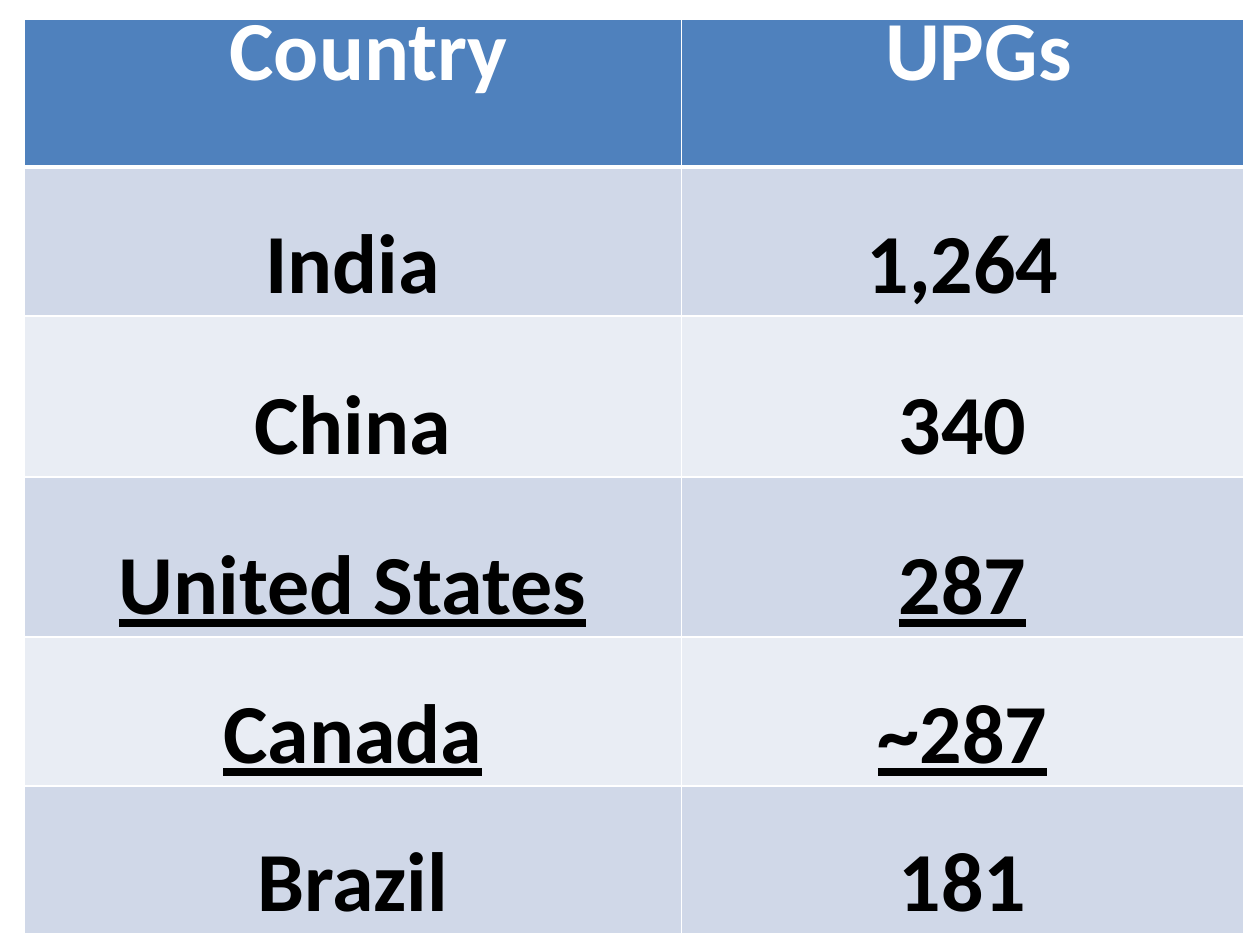
"""Build a slide with a table of UPG counts by country."""
from lxml import etree
from pptx import Presentation
from pptx import util as u
from pptx.dml.color import RGBColor
from pptx.enum import text
from pptx.oxml.ns import qn

HEADER = ("Country", "UPGs")
COUNTRIES = [
    ("India", "1,264"),
    ("China", "340"),
    ("United States", "287"),
    ("Canada", "~287"),
    ("Brazil", "181"),
]
UNDERLINED = {"United States", "Canada"}
COLORS = {
    "header": "4F81BD",
    "odd": "D0D8E8",
    "even": "E9EDF4",
    "border": "FFFFFF",
    "header_text": "FFFFFF",
    "body_text": "000000",
}
COLUMN_WIDTHS = (13.26, 11.33)
ROW_HEIGHTS = (2.99, 3.0, 3.25, 3.22, 3.0, 2.99)
LEFT, TOP = 0.48, 0.38
LINE_PITCH = u.Pt(24)
HEADER_INDENT = u.Cm(0.64)


def add_borders(cell, bottom):
    properties = cell._tc.get_or_add_tcPr()
    for side, points in (("L", 1), ("R", 1), ("T", 1), ("B", bottom)):
        line = etree.SubElement(properties, qn(f"a:ln{side}"), w=str(u.Pt(points)))
        fill = etree.SubElement(line, qn("a:solidFill"))
        etree.SubElement(fill, qn("a:srgbClr"), val=COLORS["border"])


def fill_cell(cell, words, row, underlined):
    is_header = row == 0
    band = "header" if is_header else ("even", "odd")[row % 2]
    add_borders(cell, 3 if is_header else 1)
    cell.fill.solid()
    cell.fill.fore_color.rgb = RGBColor.from_string(COLORS[band])
    cell.margin_left = cell.margin_right = u.Cm(0.05)
    cell.margin_top = LINE_PITCH if is_header else 0
    cell.margin_bottom = 0
    anchor = text.MSO_ANCHOR
    cell.vertical_anchor = anchor.TOP if is_header else anchor.BOTTOM
    cell.text = words

    para = cell.text_frame.paragraphs[0]
    para.alignment = text.PP_ALIGN.CENTER
    para.line_spacing = LINE_PITCH
    if is_header:
        para._p.get_or_add_pPr().set("indent", str(HEADER_INDENT))
    font = para.runs[0].font
    font.name, font.size, font.bold = "Calibri", u.Pt(48), True
    font.underline = underlined
    color = "header_text" if is_header else "body_text"
    font.color.rgb = RGBColor.from_string(COLORS[color])


def main():
    deck = Presentation()
    deck.slide_width, deck.slide_height = u.Cm(25.4), u.Cm(19.05)
    page = deck.slides.add_slide(deck.slide_layouts.get_by_name("Blank"))
    rows = [HEADER, *COUNTRIES]
    table = page.shapes.add_table(
        len(rows), len(HEADER), u.Cm(LEFT), u.Cm(TOP),
        u.Cm(sum(COLUMN_WIDTHS)), u.Cm(sum(ROW_HEIGHTS)),
    ).table
    for column, width in zip(table.columns, COLUMN_WIDTHS):
        column.width = u.Cm(width)
    for row, (values, height) in enumerate(zip(rows, ROW_HEIGHTS)):
        table.rows[row].height = u.Cm(height)
        for column, words in enumerate(values):
            fill_cell(table.cell(row, column), words, row, values[0] in UNDERLINED)
    deck.save("out.pptx")


if __name__ == "__main__":
    main()
